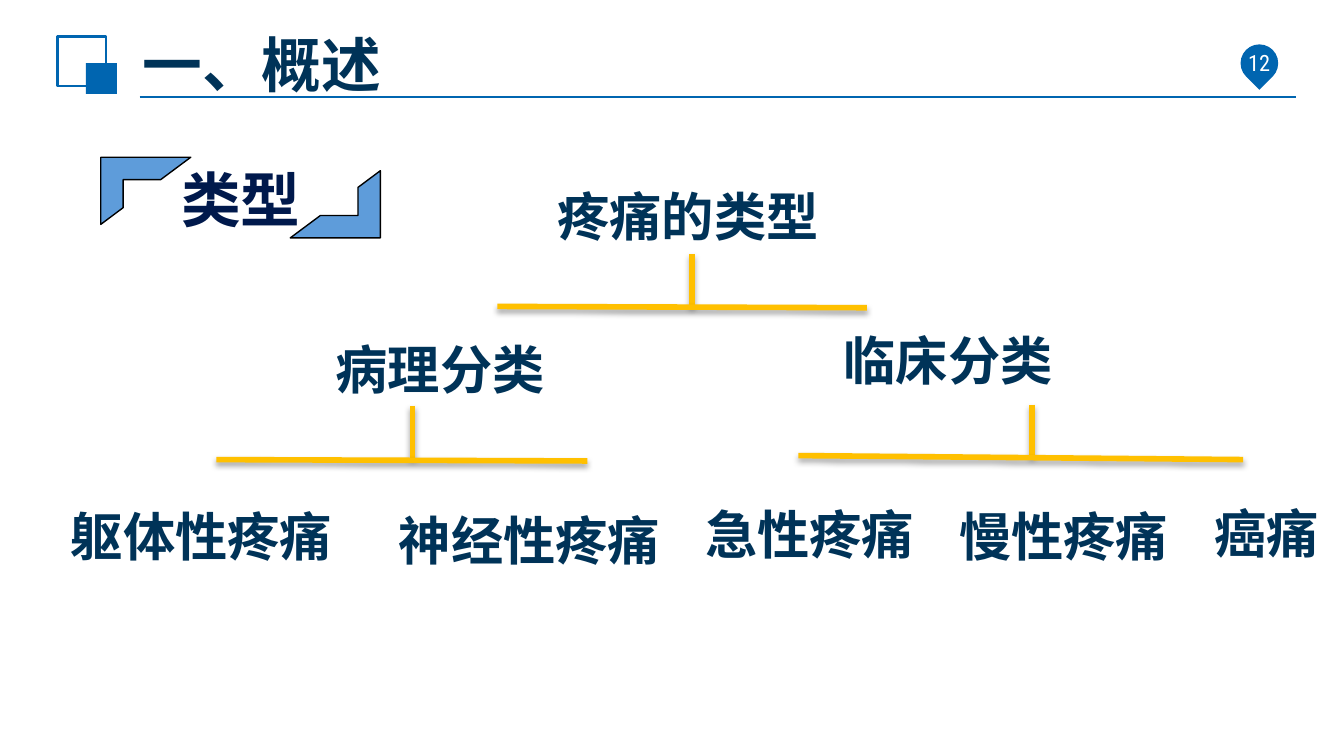
from lxml.etree import SubElement
from pptx import Presentation
from pptx.dml.color import RGBColor
from pptx.enum.shapes import MSO_CONNECTOR, MSO_SHAPE
from pptx.enum.text import MSO_ANCHOR, MSO_AUTO_SIZE, PP_ALIGN
from pptx.oxml.ns import qn
from pptx.util import Pt

PX = 9144  # 100 px to the inch
WIDTH = 1000
HEIGHT = WIDTH * 9 / 16
COLORS = {
    "blue": "0065B0", "navy": "003358", "ink": "00194C", "sky": "5E9CDA",
    "gold": "FFC000", "black": "000000", "white": "FFFFFF",
}
TITLE = {"size": 32, "name": "Arial", "bold": True, "color": "navy"}
NODE = {**TITLE, "size": 28}
TAG = {**TITLE, "name": "Noto Sans CJK SC", "color": "ink"}
NUMBER = {"size": 12, "name": "Roboto Condensed", "bold": False, "color": "white"}


def emu(*lengths):
    return [round(length * PX) for length in lengths]


def rgb(name):
    return RGBColor.from_string(COLORS[name])


def write(shape, words, style, margins=(10, 5), anchor=MSO_ANCHOR.TOP,
          align=PP_ALIGN.LEFT):
    frame = shape.text_frame
    side, end = emu(*margins)
    settings = {
        "word_wrap": True, "auto_size": MSO_AUTO_SIZE.NONE,
        "vertical_anchor": anchor, "margin_left": side, "margin_right": side,
        "margin_top": end, "margin_bottom": end,
    }
    for key, value in settings.items():
        setattr(frame, key, value)
    para = frame.paragraphs[0]
    para.alignment = align
    span = para.add_run()
    span.text = words
    formats = {**style, "size": Pt(style["size"])}
    color = formats.pop("color")
    for key, value in formats.items():
        setattr(span.font, key, value)
    span.font.color.rgb = rgb(color)
    SubElement(span.font._element, qn("a:ea"), typeface=style["name"])


def add_text(page, box, words, style, **layout):
    write(page.shapes.add_textbox(*emu(*box)), words, style, **layout)


def add_figure(page, kind, box, fill=None, line=None, width=1, rotation=0):
    shape = page.shapes.add_shape(kind, *emu(*box))
    shape.shadow.inherit = False
    shape.rotation = rotation
    if fill:
        shape.fill.solid()
        shape.fill.fore_color.rgb = rgb(fill)
    else:
        shape.fill.background()
    if line:
        shape.line.color.rgb = rgb(line)
        shape.line.width = Pt(width)
    else:
        shape.line.fill.background()


def add_line(page, start, end, color, width, shadow=False):
    line = page.shapes.add_connector(MSO_CONNECTOR.STRAIGHT, *emu(*start, *end))
    line.line.color.rgb = rgb(color)
    line.line.width = Pt(width)
    effects = SubElement(line._element.spPr, qn("a:effectLst"))
    if shadow:
        outer = SubElement(effects, qn("a:outerShdw"), blurRad=str(Pt(3.1)),
                           dist=str(Pt(1.8)), dir="5400000", rotWithShape="0")
        tint = SubElement(outer, qn("a:srgbClr"), val=COLORS["black"])
        SubElement(tint, qn("a:alpha"), val="35000")


def add_header(page, box, words, number):
    left, top, width, height = box
    bottom = top + height
    add_line(page, (left + 61, bottom), (left + width, bottom), "blue", 1.25)
    add_figure(page, MSO_SHAPE.RECTANGLE, (left, top, 36, 37), line="blue", width=1.5)
    add_figure(page, MSO_SHAPE.RECTANGLE, (left + 21, top + 20, 23, 23), fill="blue")
    add_figure(page, MSO_SHAPE.TEAR, (left + 880, top + 6, 28, 28), fill="blue",
               rotation=135)
    title = page.shapes.title
    place = emu(left + 56, top + 2, 645, 36)
    for key, value in zip(("left", "top", "width", "height"), place):
        setattr(title, key, value)
    write(title, words, TITLE, margins=(7, 4), anchor=MSO_ANCHOR.MIDDLE)
    add_text(page, (left + 827, top + 3, 134, 33), number, NUMBER, margins=(11, 6),
             anchor=MSO_ANCHOR.MIDDLE, align=PP_ALIGN.CENTER)


def add_tag(page, box, words):
    """Place a label between two corner brackets."""
    left, top, width, height = box
    corner = (67, 50)
    opposite = (left + width - corner[0], top + height - corner[1])
    for place, rotation in (((left, top), 0), (opposite, 180)):
        add_figure(page, MSO_SHAPE.HALF_FRAME, (*place, *corner), fill="sky",
                   line="black", width=0.75, rotation=rotation)
    add_text(page, (left + 50, top - 1, 125, 64), words, TAG)


def add_tree(page, box, nodes, forks):
    """Nodes are (words, x, y, width); forks are (stem x, top, bar start, bar end)."""
    left, top = box[:2]
    for stem, stem_top, (x1, y1), (x2, y2) in forks:
        x, y = left + stem, top + stem_top
        add_line(page, (x, y), (x, y + 39), "gold", 3, shadow=True)
        add_line(page, (left + x1, top + y1), (left + x2, top + y2), "gold", 3,
                 shadow=True)
    for words, x, y, width in nodes:
        add_text(page, (left + x, top + y, width, 57), words, NODE)


def main():
    deck = Presentation()
    deck.slide_width, deck.slide_height = emu(WIDTH, HEIGHT)
    page = deck.slides.add_slide(deck.slide_layouts[5])
    add_header(page, (43, 27, 921, 45), "一、概述", "12")
    add_tag(page, (75, 117, 208, 60), "类型")
    nodes = [
        ("疼痛的类型", 362, 0, 236),
        ("病理分类", 197, 114, 236),
        ("临床分类", 575, 107, 236),
        ("躯体性疼痛", 0, 238, 236),
        ("神经性疼痛", 244, 241, 236),
        ("急性疼痛", 472, 237, 236),
        ("慢性疼痛", 661, 238, 236),
        ("癌痛", 851, 236, 102),
    ]
    forks = [
        (472, 57, (602, 97), (327, 96)),
        (264, 170, (394, 211), (118, 210)),
        (725, 169, (882, 210), (551, 207)),
    ]
    add_tree(page, (43, 132, 953, 298), nodes, forks)
    deck.save("out.pptx")


if __name__ == "__main__":
    main()
